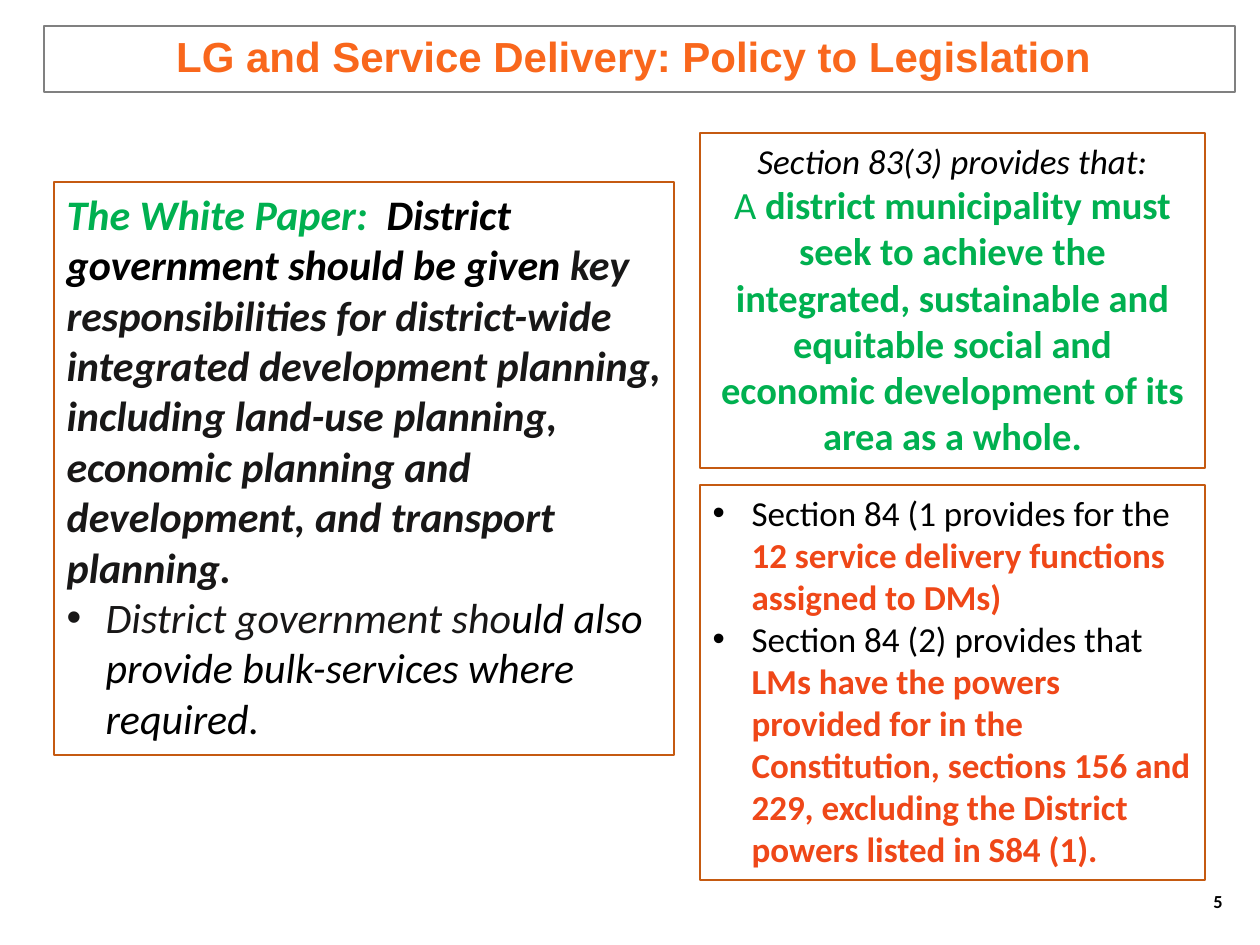
from dataclasses import dataclass
from typing import Optional

from lxml.etree import SubElement
from pptx import Presentation
from pptx.dml.color import RGBColor
from pptx.enum.shapes import MSO_SHAPE
from pptx.enum.text import MSO_ANCHOR, MSO_AUTO_SIZE, PP_ALIGN
from pptx.oxml.ns import qn
from pptx.util import Emu, Pt

PX = 914400 / 126
INDENT = 39

BLACK, CHARCOAL, GREEN = "000000", "181717", "00B050"
ORANGE, RED, BROWN, GRAY = "F9671C", "EF4718", "C55A11", "808080"


@dataclass
class TextRun:
    text: str
    color: str = BLACK
    size: float = 20
    bold: bool = False
    italic: bool = False
    font: str = "Calibri"


@dataclass
class TextParagraph:
    runs: list[TextRun]
    align: PP_ALIGN = PP_ALIGN.LEFT
    bullet: bool = False
    line_spacing: float = 1.0


@dataclass
class Box:
    left: int
    top: int
    width: int
    height: int
    paragraphs: list[TextParagraph]
    outline: Optional[str] = BROWN
    anchor: MSO_ANCHOR = MSO_ANCHOR.TOP


def px(length: int) -> Emu:
    return Emu(round(length * PX))


def rgb(color: str) -> RGBColor:
    return RGBColor.from_string(color)


def set_bullet(paragraph, bullet: bool) -> None:
    properties = paragraph._p.get_or_add_pPr()
    indent = px(INDENT) if bullet else 0
    properties.set("marL", str(indent))
    properties.set("indent", str(-indent))
    if bullet:
        SubElement(properties, qn("a:buFont"), typeface="Arial")
        SubElement(properties, qn("a:buChar"), char="•")
    else:
        SubElement(properties, qn("a:buNone"))


def write_paragraph(paragraph, content: TextParagraph) -> None:
    set_bullet(paragraph, content.bullet)
    formats = {
        "alignment": content.align,
        "line_spacing": content.line_spacing,
        "space_before": Pt(0),
        "space_after": Pt(0),
    }
    for name, value in formats.items():
        setattr(paragraph, name, value)
    for item in content.runs:
        run = paragraph.add_run()
        run.text = item.text
        formats = {
            "name": item.font,
            "size": Pt(item.size),
            "bold": item.bold,
            "italic": item.italic,
        }
        for name, value in formats.items():
            setattr(run.font, name, value)
        run.font.color.rgb = rgb(item.color)


def fill_box(shape, box: Box) -> None:
    """Place a shape, outline it and write its paragraphs."""
    for name in ("left", "top", "width", "height"):
        setattr(shape, name, px(getattr(box, name)))
    shape.fill.background()
    if box.outline:
        shape.line.color.rgb = rgb(box.outline)
        shape.line.width = Pt(0.75)
    frame = shape.text_frame
    formats = {
        "word_wrap": True,
        "auto_size": MSO_AUTO_SIZE.NONE,
        "vertical_anchor": box.anchor,
    }
    for name, value in formats.items():
        setattr(frame, name, value)
    for index, content in enumerate(box.paragraphs):
        paragraph = frame.add_paragraph() if index else frame.paragraphs[0]
        write_paragraph(paragraph, content)


TITLE = Box(44, 26, 1191, 66, [
    TextParagraph(
        [TextRun("LG and Service Delivery: Policy to Legislation ",
                 ORANGE, 24, bold=True, font="Arial")],
        PP_ALIGN.CENTER, line_spacing=0.9),
], GRAY, MSO_ANCHOR.MIDDLE)

WHITE_PAPER = Box(54, 182, 620, 573, [
    TextParagraph([
        TextRun("The White Paper:  ", GREEN, 24, True, True),
        TextRun("District government should be given ", BLACK, 24, True, True),
        TextRun("key responsibilities for district-wide integrated development "
                "planning, including land-use planning, economic planning and "
                "development, and transport planning.",
                CHARCOAL, 24, True, True),
    ]),
    TextParagraph([
        TextRun("District government sho", CHARCOAL, 24, italic=True),
        TextRun("uld also provide bulk-services where required.",
                size=24, italic=True),
    ], bullet=True),
])

SECTION_83 = Box(700, 133, 505, 335, [
    TextParagraph([TextRun("Section 83(3) provides that:", italic=True)],
                  PP_ALIGN.CENTER),
    TextParagraph([
        TextRun("A ", GREEN, 22),
        TextRun("district municipality must seek to achieve the integrated, "
                "sustainable and equitable social and economic development of "
                "its area as a whole.", GREEN, 22, True),
    ], PP_ALIGN.CENTER),
])

SECTION_84 = Box(700, 485, 505, 395, [
    TextParagraph([
        TextRun("Section 84 (1 provides for the "),
        TextRun("12 service delivery functions assigned to DMs)",
                RED, bold=True),
    ], bullet=True),
    TextParagraph([
        TextRun("Section 84 (2) provides that "),
        TextRun("LMs have the powers provided for in the Constitution, "
                "sections 156 and 229, excluding the District powers listed "
                "in S84 (1).", RED, bold=True),
    ], bullet=True),
])

PAGE_NUMBER = Box(1178, 876, 57, 50, [
    TextParagraph([TextRun("5", size=10.5, bold=True)], PP_ALIGN.RIGHT),
], None, MSO_ANCHOR.MIDDLE)


def main() -> None:
    presentation = Presentation()
    presentation.slide_width, presentation.slide_height = px(1260), px(945)
    slide = presentation.slides.add_slide(presentation.slide_layouts[3])

    # Title and the two lists
    title, left_body, right_body = slide.placeholders
    fill_box(title, TITLE)
    fill_box(left_body, WHITE_PAPER)
    fill_box(right_body, SECTION_84)

    # Quoted section
    quote = slide.shapes.add_shape(MSO_SHAPE.RECTANGLE, 0, 0, px(1), px(1))
    quote.shadow.inherit = False
    fill_box(quote, SECTION_83)

    # Page number
    fill_box(slide.shapes.add_textbox(0, 0, px(1), px(1)), PAGE_NUMBER)

    presentation.save("out.pptx")


if __name__ == "__main__":
    main()
